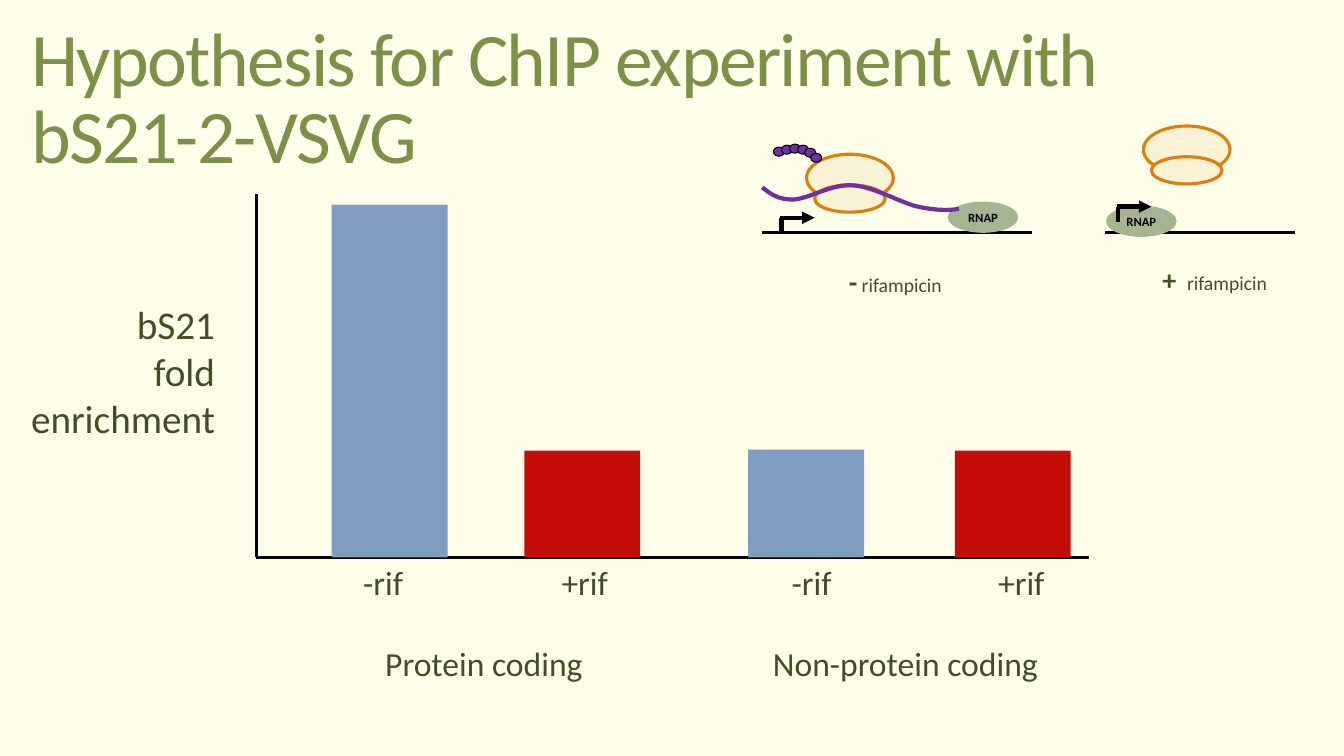
from lxml.etree import SubElement
from pptx import Presentation
from pptx.dml.color import RGBColor
from pptx.enum.shapes import MSO_CONNECTOR as Link, MSO_SHAPE as Kind
from pptx.enum.text import MSO_ANCHOR as Anchor, PP_ALIGN as Align
from pptx.oxml.ns import qn
from pptx.util import Inches, Pt

WIDE, HIGH = 13.33, 7.5
PAPER, TITLE, INK, BLACK = "FFFEEB", "7E8F47", "444D26", "000000"
BLUE, RED, CREAM, ORANGE = "809EC2", "C40C08", "FAF2D4", "DD7E0E"
SAGE, PURPLE = "A5B592", "7030A0"
BEADS = [(0.11, 0.03), (0.19, 0.01), (0.27, 0), (0.35, 0.01), (0.42, 0.04), (0.48, 0.09)]
STRAND = [(0, 0.43), (0.08, 0.49), (0.15, 0.55), (0.3, 0.55),
          (0.45, 0.55), (0.69, 0.39), (0.9, 0.41),
          (1.1, 0.42), (1.37, 0.58), (1.54, 0.62),
          (1.72, 0.66), (1.88, 0.66), (1.95, 0.64)]


def color(code):
    """Turn a hex string into a colour."""
    return RGBColor.from_string(code)


def place(box):
    """Turn a box in inches into lengths."""
    return [Inches(part) for part in box]


def add_run(para, text, size, code=INK, bold=False):
    """Add one run of text to a paragraph."""
    run = para.add_run()
    run.text = text
    font = run.font
    font.name, font.size, font.bold = "Calibri", Pt(size), bold
    font.color.rgb = color(code)
    return run


def add_text(slide, box, paras, align=Align.LEFT):
    """Add a text box from paragraphs of (text, size, bold) runs."""
    frame = slide.shapes.add_textbox(*place(box)).text_frame
    frame.word_wrap = True
    for i, runs in enumerate(paras):
        para = frame.add_paragraph() if i else frame.paragraphs[0]
        para.alignment = align
        for text, size, bold in runs:
            add_run(para, text, size, bold=bold)


def add_form(slide, kind, box, fill, edge=None, width=2.25):
    """Add a filled shape with an optional outline."""
    form = slide.shapes.add_shape(kind, *place(box))
    form.shadow.inherit = False
    form.fill.solid()
    form.fill.fore_color.rgb = color(fill)
    if edge:
        form.line.color.rgb = color(edge)
        form.line.width = Pt(width)
    else:
        form.line.fill.background()
    return form


def add_line(slide, start, end, width=2.25, arrow=False):
    """Add a straight black line, with an arrowhead if asked."""
    line = slide.shapes.add_connector(Link.STRAIGHT, *place((*start, *end)))
    line.line.color.rgb = color(BLACK)
    line.line.width = Pt(width)
    if arrow:
        SubElement(line.line._get_or_add_ln(), qn("a:tailEnd"), type="triangle")
    SubElement(line._element.spPr, qn("a:effectLst"))


def set_title(slide, box):
    """Place and format the title."""
    title = slide.shapes.title
    title.left, title.top, title.width, title.height = place(box)
    frame = title.text_frame
    frame.word_wrap, frame.vertical_anchor = True, Anchor.MIDDLE
    para = frame.paragraphs[0]
    para.alignment, para.line_spacing = Align.LEFT, 0.85
    run = add_run(para, "Hypothesis for ChIP experiment with bS21-2-VSVG", 54, TITLE)
    run.font._element.set("spc", "-120")


def draw_bars(slide, box):
    """Draw the axes, bars and labels of the bar sketch."""
    x, y, w, h = box
    base = y + h
    add_line(slide, (x, base), (x + w, base))
    add_line(slide, (x, base), (x, y))
    bars = [(0.75, 3.5, BLUE, "-rif", 1.26), (2.66, 1.06, RED, "+rif", 3.26),
            (4.88, 1.07, BLUE, "-rif", 5.51), (6.93, 1.06, RED, "+rif", 7.59)]
    for left, tall, fill, name, mid in bars:
        add_form(slide, Kind.RECTANGLE, (x + left, base - tall, 1.15, tall), fill)
        add_text(slide, (x + mid - 0.5, base, 1, 0.5), [[(name, 24, False)]], Align.CENTER)
    for name, mid in (("Protein coding", 2.26), ("Non-protein coding", 6.44)):
        add_text(slide, (x + mid - 1.6, base + 0.8, 3.2, 0.5),
                 [[(name, 24, False)]], Align.CENTER)
    add_text(slide, (x - 2.4, y + 1.01, 2.09, 1.51),
             [[("bS21", 28, False)], [("fold enrichment", 28, False)]], Align.RIGHT)


def draw_ribo(slide, x, y):
    """Draw the two ribosome subunits."""
    for box in ((x, y, 0.86, 0.47), (x + 0.08, y + 0.305, 0.7, 0.27)):
        add_form(slide, Kind.OVAL, box, CREAM, ORANGE)


def draw_rnap(slide, x, y):
    """Draw the labelled polymerase."""
    frame = add_form(slide, Kind.OVAL, (x, y, 0.7, 0.31), SAGE).text_frame
    frame.margin_left = frame.margin_right = frame.margin_top = frame.margin_bottom = 0
    frame.word_wrap, frame.vertical_anchor = False, Anchor.MIDDLE
    frame.paragraphs[0].alignment = Align.CENTER
    add_run(frame.paragraphs[0], "RNAP", 9, BLACK, True)


def draw_start(slide, x, y):
    """Draw the bent arrow of the promoter."""
    add_line(slide, (x, y), (x, y + 0.15), 3)
    add_line(slide, (x - 0.01, y), (x + 0.33, y), 3, True)


def trace(nodes, steps=16):
    """Sample points along a chain of cubic curves."""
    points = [nodes[0]]
    for i in range(0, len(nodes) - 1, 3):
        for t in (k / steps for k in range(1, steps + 1)):
            share = ((1 - t) ** 3, 3 * t * (1 - t) ** 2, 3 * t * t * (1 - t), t ** 3)
            points.append(tuple(sum(s * node[axis] for s, node in zip(share, nodes[i:i + 4]))
                                for axis in (0, 1)))
    return points


def draw_minus(slide, box):
    """Draw transcription and translation without the drug."""
    x, y, w, h = box
    draw_ribo(slide, x + 0.44, y + 0.1)
    for left, top in BEADS:
        add_form(slide, Kind.OVAL, (x + left, y + top, 0.11, 0.09), PURPLE, BLACK, 0.75)
    add_line(slide, (x, y + h), (x + w, y + h))
    draw_rnap(slide, x + 1.84, y + h - 0.31)
    points = [place((x + left, y + top)) for left, top in trace(STRAND)]
    pen = slide.shapes.build_freeform(*points[0])
    pen.add_line_segments(points[1:], close=False)
    strand = pen.convert_to_shape()
    strand.shadow.inherit = False
    strand.fill.background()
    strand.line.color.rgb = color(PURPLE)
    strand.line.width = Pt(3)
    draw_start(slide, x + 0.19, y + h - 0.15)
    add_text(slide, (x + 0.76, y + 1.15, 1.76, 0.44),
             [[("-", 20, True), (" rifampicin", 14, False)]])


def draw_plus(slide, box):
    """Draw the stalled polymerase and free ribosome with the drug."""
    x, y, w, h = box
    draw_ribo(slide, x + 0.38, y)
    add_line(slide, (x, y + h), (x + w, y + h))
    draw_rnap(slide, x + 0.01, y + 0.79)
    add_text(slide, (x + 0.47, y + 1.31, 1.76, 0.44),
             [[("+ ", 20, True), (" rifampicin", 14, False)]])
    draw_start(slide, x + 0.13, y + 0.8)


def main():
    """Build and save the slide."""
    deck = Presentation()
    deck.slide_width, deck.slide_height = place((WIDE, HIGH))
    slide = deck.slides.add_slide(deck.slide_layouts[5])
    slide.background.fill.solid()
    slide.background.fill.fore_color.rgb = color(PAPER)
    set_title(slide, (0.21, 0.11, 11.78, 1.81))
    draw_bars(slide, (2.54, 1.92, 8.26, 3.61))
    draw_minus(slide, (7.56, 1.43, 2.68, 0.88))
    draw_plus(slide, (10.96, 1.25, 1.88, 1.06))
    deck.save("out.pptx")


if __name__ == "__main__":
    main()
